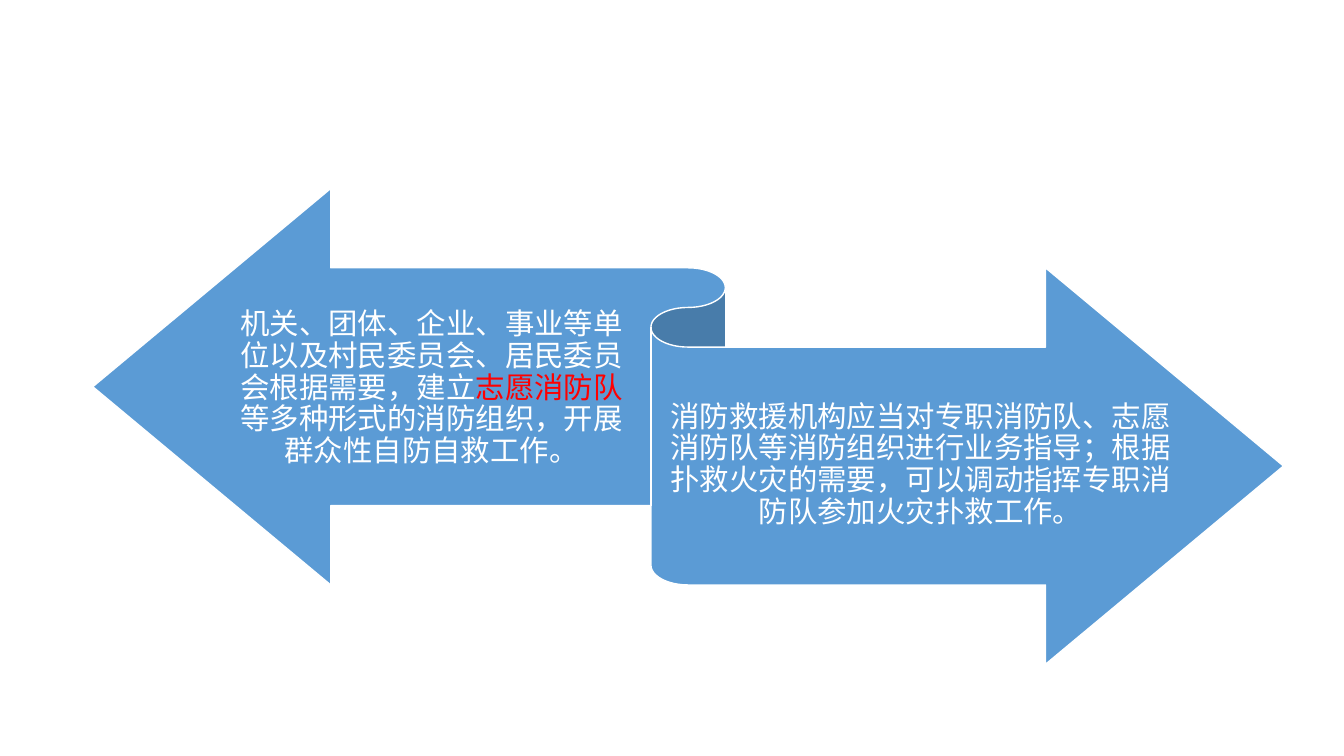
from pptx import Presentation, util as u
from pptx.dml.color import RGBColor
from pptx.enum import shapes, text
from pptx.oxml.ns import qn

BLUE = RGBColor(0x5B, 0x9B, 0xD5)
WHITE = RGBColor(0xFF, 0xFF, 0xFF)
RED = RGBColor(0xFF, 0x00, 0x00)
FONT = "Noto Sans CJK SC"


def add_ribbon(group, left, top, width, height):
    """Add the double-ended arrow ribbon."""
    ribbon = group.shapes.add_shape(
        shapes.MSO_SHAPE.LEFT_RIGHT_RIBBON,
        u.Inches(left), u.Inches(top), u.Inches(width), u.Inches(height))
    ribbon.shadow.inherit = False
    ribbon.fill.solid()
    ribbon.fill.fore_color.rgb = BLUE
    ribbon.line.color.rgb = WHITE
    ribbon.line.width = u.Pt(1)


def add_run(paragraph, wording, color=WHITE, size=21, font=FONT):
    """Append formatted text to a paragraph."""
    run = paragraph.add_run()
    run.text = wording
    run.font.size = u.Pt(size)
    run.font.name = font
    run.font.color.rgb = color
    east_asian = run.font._element.makeelement(qn("a:ea"), {"typeface": font})
    run.font._element.find(qn("a:latin")).addnext(east_asian)


def add_statement(group, left, top, width, height, parts):
    """Add a centred statement made of (wording, colour) parts."""
    box = group.shapes.add_textbox(
        u.Inches(left), u.Inches(top), u.Inches(width), u.Inches(height))
    frame = box.text_frame
    frame.word_wrap = True
    frame.vertical_anchor = text.MSO_ANCHOR.MIDDLE
    frame.margin_left = frame.margin_right = 0
    frame.margin_top = u.Inches(0.08)
    frame.margin_bottom = u.Inches(0.09)
    paragraph = frame.paragraphs[0]
    paragraph.alignment = text.PP_ALIGN.CENTER
    paragraph.line_spacing = 0.9
    paragraph.space_after = u.Pt(7.35)
    for wording, color in parts:
        add_run(paragraph, wording, color=color)


def main():
    """Build and save the slide."""
    deck = Presentation()
    deck.slide_width = u.Inches(13.33)
    deck.slide_height = u.Inches(7.5)
    slide = deck.slides.add_slide(deck.slide_layouts[6])
    diagram = slide.shapes.add_group_shape()
    add_ribbon(diagram, 0.92, 1.87, 11.81, 4.72)
    add_statement(diagram, 2.33, 2.7, 3.9, 2.32, [
        ("机关、团体、企业、事业等单位以及村民委员会、居民委员会根据需要，建立", WHITE),
        ("志愿消防队", RED),
        ("等多种形式的消防组织，开展群众性自防自救工作。", WHITE),
    ])
    add_statement(diagram, 6.56, 3.46, 5.14, 2.32, [
        ("消防救援机构应当对专职消防队、志愿消防队等消防组织进行业务指导；"
         "根据扑救火灾的需要，可以调动指挥专职消防队参加火灾扑救工作。", WHITE),
    ])
    deck.save("out.pptx")


if __name__ == "__main__":
    main()
